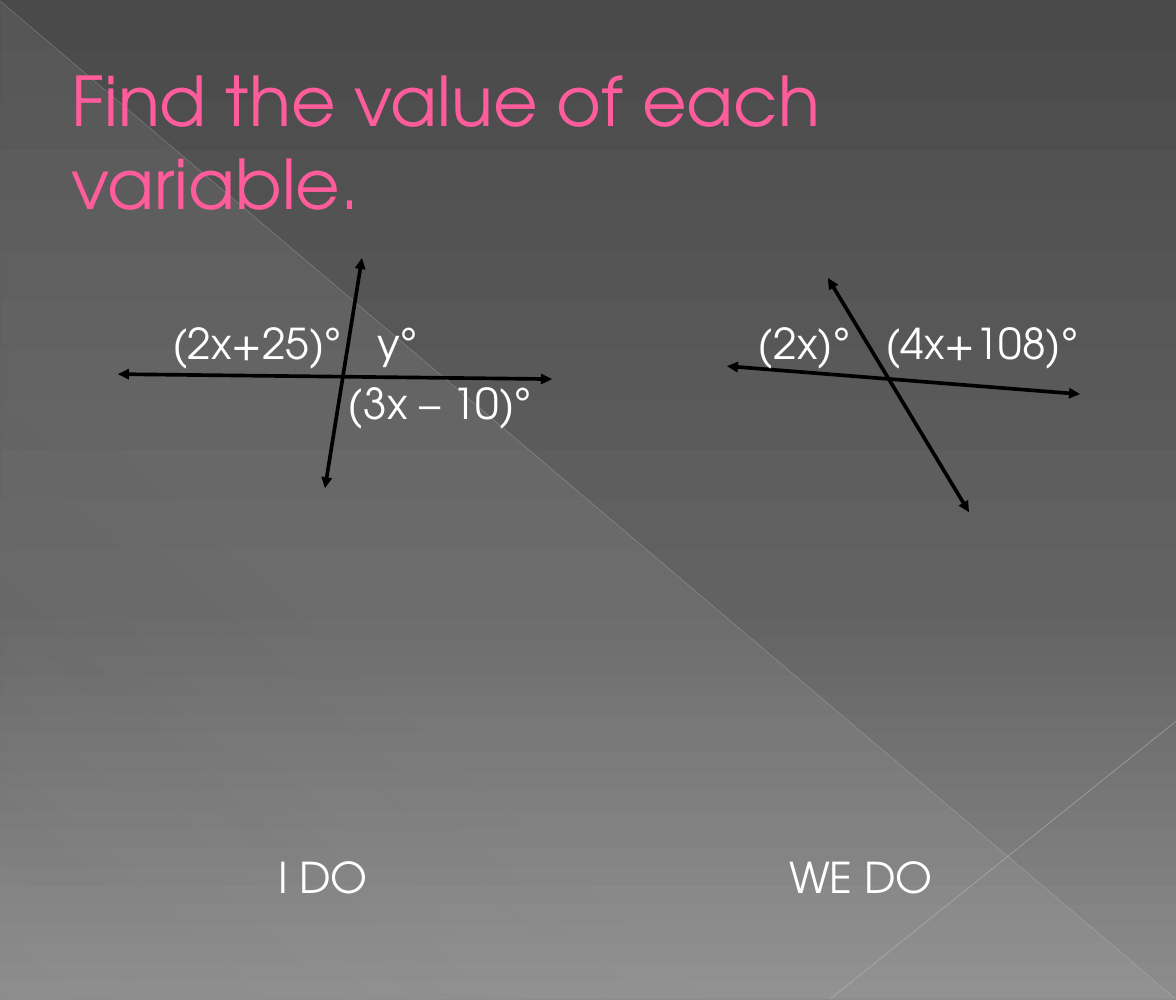
"""Build a slide with two crossing-line angle problems, one worked and one shared."""
from lxml import etree
from pptx import Presentation
from pptx.dml.color import RGBColor
from pptx.enum import shapes, text
from pptx.oxml.ns import qn
from pptx import util as u

PX = u.Inches(10) / 1176
FONT = "TeX Gyre Adventor"
COLORS = {
    "title": "FF5C9C", "label": "FFFFFF", "arrow": "000000",
    "top": "4A4A4A", "middle": "626262", "bottom": "8C8C8C",
    "sheen": "D2D2D2", "diagonal": "BFBFBF", "corner": "C6C6C6",
}


def set_gradient(fill, element, angle, stops):
    fill.gradient()
    gradient = element.find(".//" + qn("a:gradFill"))
    stop_list = gradient.find(qn("a:gsLst"))
    for stop in list(stop_list):
        stop_list.remove(stop)
    for position, color, alpha in stops:
        stop = etree.SubElement(stop_list, qn("a:gs"), pos=str(position * 1000))
        shade = etree.SubElement(stop, qn("a:srgbClr"), val=COLORS[color])
        etree.SubElement(shade, qn("a:alpha"), val=str(alpha * 1000))
    gradient.find(qn("a:lin")).set("ang", str(angle * 60000))


def add_text(words, bounds, size, color, align=text.PP_ALIGN.LEFT, wrap=False):
    box = page.shapes.add_textbox(*[round(value * PX) for value in bounds])
    frame = box.text_frame
    frame.word_wrap = wrap
    frame.vertical_anchor = text.MSO_ANCHOR.MIDDLE
    frame.margin_left = frame.margin_right = 0
    frame.margin_top = frame.margin_bottom = 0
    para = frame.paragraphs[0]
    para.text = words
    para.alignment = align
    para.font.name = FONT
    para.font.size = u.Pt(size)
    para.font.color.rgb = RGBColor.from_string(COLORS[color])


deck = Presentation()
deck.slide_width, deck.slide_height = u.Inches(10), u.Inches(8.5)
page = deck.slides.add_slide(deck.slide_layouts[6])
set_gradient(page.background.fill, page.element, 90,
             [(0, "top", 100), (60, "middle", 100), (100, "bottom", 100)])

triangle = page.shapes.add_shape(
    shapes.MSO_SHAPE.RIGHT_TRIANGLE,
    *[round(value * PX) for value in (1, 2, 1175, 996)])
triangle.shadow.inherit = False
triangle.line.fill.background()
set_gradient(triangle.fill, triangle.element, 133,
             [(0, "sheen", 10), (70, "sheen", 8), (100, "sheen", 1)])

lines = [
    ((0, 1, 1175, 998), "diagonal", 0.39, 35, False),
    ((1176, 721, 831, 998), "corner", 0.47, 45, False),
    ((118, 374, 552, 379), "arrow", 2.25, 100, True),
    ((362, 258, 325, 488), "arrow", 2.25, 100, True),
    ((828, 278, 969, 512), "arrow", 2.25, 100, True),
    ((727, 366, 1080, 394), "arrow", 2.25, 100, True),
]
for ends, color, width, alpha, arrows in lines:
    line = page.shapes.add_connector(
        shapes.MSO_CONNECTOR.STRAIGHT, *[round(value * PX) for value in ends])
    line.line.width = u.Pt(width)
    line.line.color.rgb = RGBColor.from_string(COLORS[color])
    shade = line.element.find(".//" + qn("a:ln") + "//" + qn("a:srgbClr"))
    etree.SubElement(shade, qn("a:alpha"), val=str(alpha * 1000))
    if arrows:
        stroke = line.line._get_or_add_ln()
        for end in ("a:headEnd", "a:tailEnd"):
            etree.SubElement(stroke, qn(end), type="triangle")
    etree.SubElement(line.element.spPr, qn("a:effectLst"))

add_text("Find the value of each variable.", (71, 39, 1035, 203), 42, "title", wrap=True)

labels = [
    ("(2x+25)°", 172, 317, 172), ("y°", 378, 317, 42), ("(3x – 10)°", 348, 377, 187),
    ("(2x)°", 758, 317, 95), ("(4x+108)°", 885, 317, 196),
]
for words, left, top, width in labels:
    add_text(words, (left, top, width, 51), 26, "label")

for words, left in (("I DO", 67), ("WE DO", 605)):
    add_text(words, (left, 851, 512, 51), 26, "label", text.PP_ALIGN.CENTER, True)

deck.save("out.pptx")
